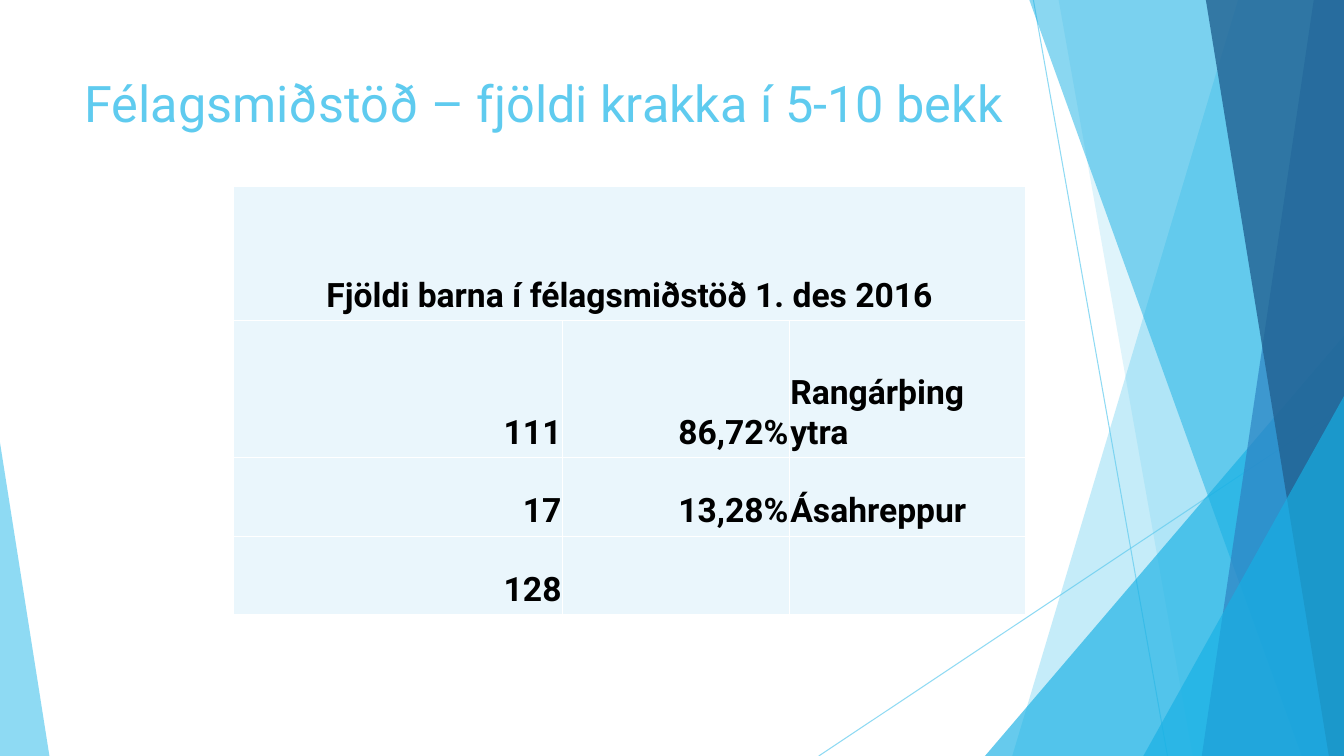
from collections import namedtuple

from pptx import Presentation
from pptx.dml.color import RGBColor
from pptx.enum.shapes import MSO_CONNECTOR as Connector, MSO_SHAPE as Shape
from pptx.enum.text import MSO_ANCHOR as Anchor, PP_ALIGN as Align
from pptx.oxml.ns import qn
from pptx.util import Inches, Pt
from lxml.etree import SubElement

Box = namedtuple("Box", "left top width height")

COLORS = {
    "sky": "5FCBEF",
    "cyan": "17B0E4",
    "blue": "2E83C3",
    "navy": "226292",
    "cell": "EAF6FC",
    "white": "FFFFFF",
    "black": "000000",
}
FONT = "Roboto"
TITLE = "Félagsmiðstöð – fjöldi krakka í 5-10 bekk"
TABLE_ROWS = [
    ["Fjöldi barna í félagsmiðstöð 1. des 2016", "", ""],
    ["111", "86,72%", "Rangárþing ytra"],
    ["17", "13,28%", "Ásahreppur"],
    ["128", "", ""],
]
COLUMN_WEIGHTS = (3.26, 2.25, 2.34)
ROW_WEIGHTS = (1.33, 1.36, 0.78, 0.78)
COLUMN_ALIGN = (Align.RIGHT, Align.RIGHT, Align.LEFT)

RAYS = [((76.89, 0), (86.87, 100)), ((100, 53.73), (60.92, 100))]
RIGHT_FACETS = [
    ("band", 92.12, 75.32, "sky", 36),
    ("band", 78.77, 88.75, "sky", 20),
    ("triangle", 73.29, 44.4, "cyan", 66),
    ("band", 76.59, 96.85, "cyan", 50),
    ("band", 97.75, 89.42, "blue", 70),
    ("band", 89.72, 98.87, "navy", 80),
    ("triangle", 85.07, 52.4, "cyan", 66),
]


def color(name):
    return RGBColor.from_string(COLORS[name])


def point(box, x, y):
    return round(box.left + box.width * x / 100), round(box.top + box.height * y / 100)


def part(box, left, top, width, height):
    x, y = point(box, left, top)
    return Box(x, y, round(box.width * width / 100), round(box.height * height / 100))


def apply(target, values):
    for name, value in values.items():
        setattr(target, name, value)


def write(paragraph, text, size, ink, align, bold=False):
    paragraph.alignment = align
    run = paragraph.add_run()
    run.text = text
    apply(run.font, {"name": FONT, "size": Pt(size), "bold": bold})
    run.font.color.rgb = color(ink)


def set_opacity(shape, percent):
    for tint in shape.element.spPr.iter(qn("a:srgbClr")):
        SubElement(tint, qn("a:alpha"), val=str(percent * 1000))


def paint(shape, tint, opacity):
    shape.shadow.inherit = False
    shape.fill.solid()
    shape.fill.fore_color.rgb = color(tint)
    shape.line.fill.background()
    set_opacity(shape, opacity)


def add_ray(slide, box, start, end):
    ray = slide.shapes.add_connector(
        Connector.STRAIGHT, *point(box, *start), *point(box, *end))
    ray.line.color.rgb = color("sky")
    ray.line.width = Pt(0.75)
    set_opacity(ray, 70)
    SubElement(ray.element.spPr, qn("a:effectLst"))


def add_band(slide, box, top_x, bottom_x, tint, opacity):
    builder = slide.shapes.build_freeform(*point(box, top_x, 0))
    corners = [(100, 0), (100, 100), (bottom_x, 100)]
    builder.add_line_segments([point(box, *corner) for corner in corners])
    paint(builder.convert_to_shape(), tint, opacity)


def add_triangle(slide, box, apex, tint, opacity):
    triangle = slide.shapes.add_shape(Shape.ISOSCELES_TRIANGLE, *box)
    triangle.adjustments[0] = apex
    paint(triangle, tint, opacity)


def add_facets(slide, box):
    for start, end in RAYS:
        add_ray(slide, box, start, end)
    for kind, first, second, tint, opacity in RIGHT_FACETS:
        if kind == "band":
            add_band(slide, box, first, second, tint, opacity)
        else:
            corner = part(box, first, second, 100 - first, 100 - second)
            add_triangle(slide, corner, 1, tint, opacity)
    add_triangle(slide, part(box, 0, 58.53, 3.68, 41.47), 0, "sky", 70)


def add_title(slide, box):
    frame = slide.shapes.add_textbox(*box).text_frame
    apply(frame, {"word_wrap": True, "vertical_anchor": Anchor.TOP})
    write(frame.paragraphs[0], TITLE, 36, "sky", Align.LEFT)


def add_borders(cell):
    properties = cell._tc.get_or_add_tcPr()
    for side in ("lnL", "lnR", "lnT", "lnB"):
        border = SubElement(properties, qn(f"a:{side}"), w=str(Pt(1)))
        fill = SubElement(border, qn("a:solidFill"))
        SubElement(fill, qn("a:srgbClr"), val=COLORS["white"])


def add_children_table(slide, box):
    table = slide.shapes.add_table(len(ROW_WEIGHTS), len(COLUMN_WEIGHTS), *box).table
    for column, weight in zip(table.columns, COLUMN_WEIGHTS):
        column.width = round(box.width * weight / sum(COLUMN_WEIGHTS))
    for row, weight in zip(table.rows, ROW_WEIGHTS):
        row.height = round(box.height * weight / sum(ROW_WEIGHTS))
    table.cell(0, 0).merge(table.cell(0, 2))
    cell_format = {
        "vertical_anchor": Anchor.BOTTOM,
        "margin_left": Inches(0.01),
        "margin_right": Inches(0.01),
        "margin_top": Inches(0.01),
        "margin_bottom": Inches(0.05),
    }
    for row_index, texts in enumerate(TABLE_ROWS):
        for column_index, text in enumerate(texts):
            cell = table.cell(row_index, column_index)
            apply(cell, cell_format)
            add_borders(cell)
            cell.fill.solid()
            cell.fill.fore_color.rgb = color("cell")
            if text:
                align = COLUMN_ALIGN[column_index] if row_index else Align.CENTER
                write(cell.text_frame.paragraphs[0], text, 24, "black", align, True)


def main():
    presentation = Presentation()
    apply(presentation, {"slide_width": Inches(13.33), "slide_height": Inches(7.5)})
    slide = presentation.slides.add_slide(presentation.slide_layouts[6])
    page = Box(0, 0, presentation.slide_width, presentation.slide_height)
    add_facets(slide, page)
    add_title(slide, part(page, 5.55, 8.93, 70.52, 19.2))
    add_children_table(slide, part(page, 17.4, 24.67, 58.89, 56.67))
    presentation.save("out.pptx")


if __name__ == "__main__":
    main()
